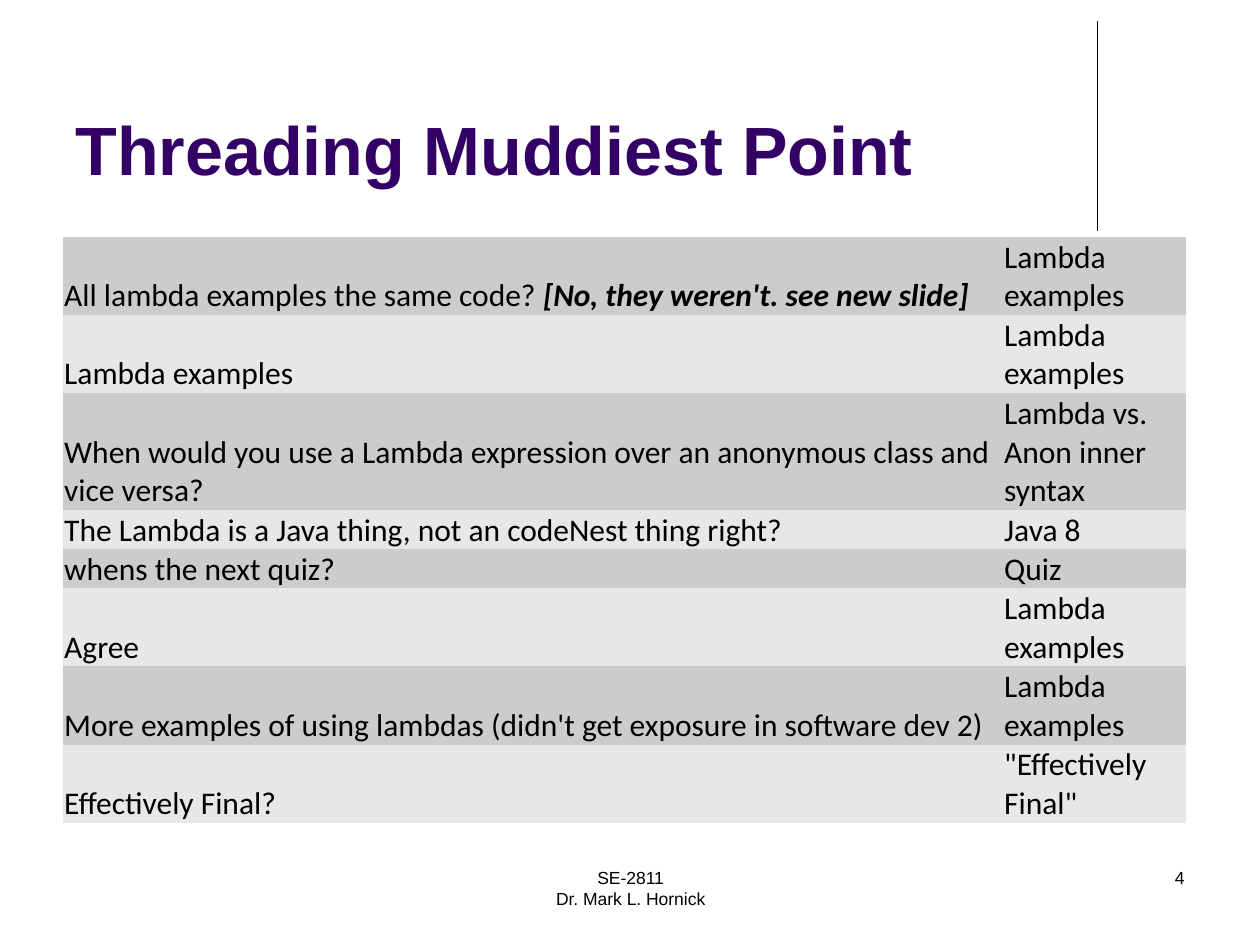
from lxml.etree import SubElement
from pptx import Presentation
from pptx.dml.color import RGBColor
from pptx.enum.shapes import MSO_CONNECTOR
from pptx.enum.text import MSO_ANCHOR, PP_ALIGN
from pptx.oxml.ns import qn
from pptx.util import Inches, Pt

BLACK = RGBColor(0x00, 0x00, 0x00)
PURPLE = RGBColor(0x33, 0x00, 0x66)
BANDS = (RGBColor(0xCC, 0xCC, 0xCC), RGBColor(0xE7, 0xE7, 0xE7))
NO_STYLE = "{2D5ABB26-0587-4C30-8999-92F81FD0307C}"
COLUMN_WIDTHS = (7.46, 1.45)
LINE_HEIGHT = 0.31
EMPHASIS = "[No, they weren't. see new slide]"
QUESTIONS = (
    ("All lambda examples the same code? ", "Lambda examples", 2),
    ("Lambda examples", "Lambda examples", 2),
    ("When would you use a Lambda expression over an anonymous class and vice versa?",
     "Lambda vs. Anon inner syntax", 3),
    ("The Lambda is a Java thing, not an codeNest thing right?", "Java 8", 1),
    ("whens the next quiz?", "Quiz", 1),
    ("Agree", "Lambda examples", 2),
    ("More examples of using lambdas (didn't get exposure in software dev 2)",
     "Lambda examples", 2),
    ("Effectively Final?", '"Effectively Final"', 2),
)


def set_font(font, name, size, color=BLACK, bold=False):
    """Set the face, size, colour and weight of a font."""
    font.name, font.size, font.bold = name, Pt(size), bold
    font.color.rgb = color


def add_text(page, area, lines, size, align=PP_ALIGN.LEFT, anchor=MSO_ANCHOR.TOP,
             color=BLACK, bold=False):
    """Add a wrapped text box with one paragraph per line."""
    box = page.shapes.add_textbox(*map(Inches, area))
    frame = box.text_frame
    frame.word_wrap = True
    frame.vertical_anchor = anchor
    frame.text = "\n".join(lines)
    for paragraph in frame.paragraphs:
        paragraph.alignment = align
        set_font(paragraph.font, "Arial", size, color, bold)


def add_rule(page, left, top, bottom):
    """Add a thin vertical line."""
    rule = page.shapes.add_connector(
        MSO_CONNECTOR.STRAIGHT, Inches(left), Inches(top), Inches(left), Inches(bottom))
    rule.line.color.rgb = BLACK
    rule.line.width = Pt(0.75)
    SubElement(rule._element.spPr, qn("a:effectLst"))


def fill_cell(cell, text, color):
    """Write text at the foot of a cell with a plain background."""
    cell.fill.solid()
    cell.fill.fore_color.rgb = color
    cell.vertical_anchor = MSO_ANCHOR.BOTTOM
    cell.margin_left = cell.margin_right = cell.margin_top = Inches(0.01)
    cell.margin_bottom = 0
    cell.text = text
    set_font(cell.text_frame.paragraphs[0].font, "Calibri", 18)


def add_questions(page):
    """Add the banded table of questions and their topics."""
    height = LINE_HEIGHT * sum(lines for _, _, lines in QUESTIONS)
    frame = page.shapes.add_table(
        len(QUESTIONS), len(COLUMN_WIDTHS), Inches(0.5), Inches(1.88),
        Inches(sum(COLUMN_WIDTHS)), Inches(height))
    table = frame.table
    table.first_row = table.horz_banding = False
    table._tbl.tblPr.find(qn("a:tableStyleId")).text = NO_STYLE
    for column, width in zip(table.columns, COLUMN_WIDTHS):
        column.width = Inches(width)
    for index, (question, topic, lines) in enumerate(QUESTIONS):
        table.rows[index].height = Inches(LINE_HEIGHT * lines)
        for column, text in enumerate((question, topic)):
            fill_cell(table.cell(index, column), text, BANDS[index % 2])
    span = table.cell(0, 0).text_frame.paragraphs[0].add_run()
    span.text = EMPHASIS
    span.font.bold = span.font.italic = True


def main():
    """Build the slide and save it."""
    deck = Presentation()
    deck.slide_width, deck.slide_height = Inches(10), Inches(7.5)
    page = deck.slides.add_slide(deck.slide_layouts[6])
    add_rule(page, 8.71, 0.17, 1.83)
    add_text(page, (0.5, 0.13, 8.25, 1.42), ["Threading Muddiest Point"], 39,
             anchor=MSO_ANCHOR.BOTTOM, color=PURPLE, bold=True)
    add_questions(page)
    add_text(page, (3.42, 6.83, 3.17, 0.5), ["SE-2811", "Dr. Mark L. Hornick"], 10,
             PP_ALIGN.CENTER)
    add_text(page, (7.17, 6.83, 2.33, 0.5), ["4"], 10, PP_ALIGN.RIGHT)
    deck.save("out.pptx")


if __name__ == "__main__":
    main()
